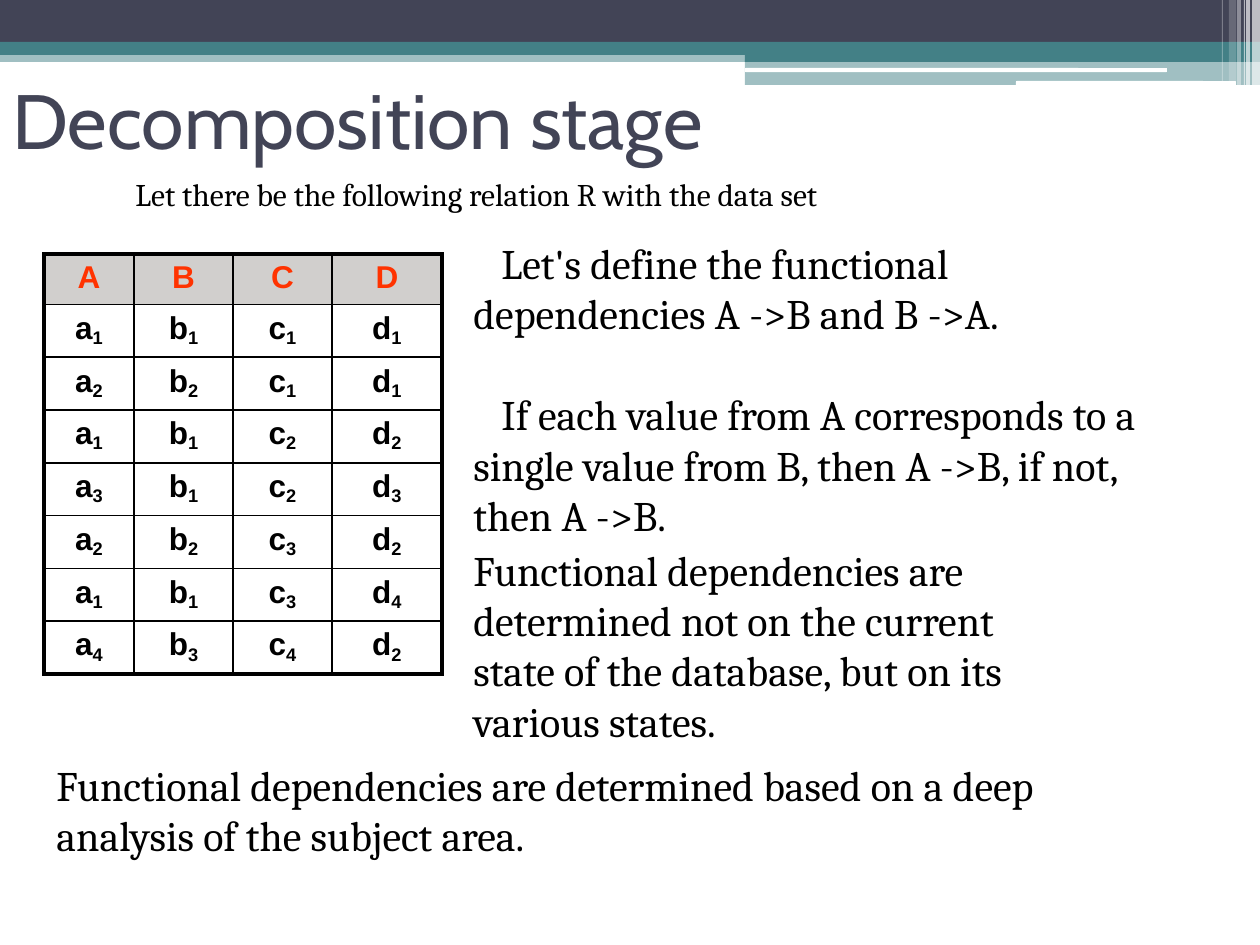
import lxml.etree
import pptx
import pptx.dml.color
import pptx.enum.shapes
import pptx.enum.text
import pptx.oxml.ns
import pptx.util

SCALE = 914400 / 126
COLORS = {
    "navy": "424456",
    "teal": "438086",
    "white": "FFFFFF",
    "black": "000000",
    "red": "FF3300",
    "gray": "D1CFCD",
}
qn = pptx.oxml.ns.qn


def px(length):
    return round(length * SCALE)


def write_text(frame, text, subscript="", size=24, font="Cambria", color="black",
               bold=False, align=pptx.enum.text.PP_ALIGN.LEFT,
               anchor=pptx.enum.text.MSO_ANCHOR.TOP, indent=0, gap=0):
    frame.word_wrap = True
    frame.vertical_anchor = anchor
    for number, line in enumerate(text.split("\n")):
        paragraph = frame.add_paragraph() if number else frame.paragraphs[0]
        paragraph.alignment = align
        if number:
            paragraph.space_before = pptx.util.Pt(gap)
        if indent:
            properties = paragraph._p.get_or_add_pPr()
            properties.set("marL", "0")
            properties.set("indent", str(px(indent)))
        for part in filter(None, (line, subscript)):
            run = paragraph.add_run()
            run.text = part
            run.font.size = pptx.util.Pt(size)
            run.font.name = font
            run.font.bold = bold
            run.font.color.rgb = pptx.dml.color.RGBColor.from_string(COLORS[color])
            if part is subscript:
                run._r.get_or_add_rPr().set("baseline", "-16000")


presentation = pptx.Presentation()
presentation.slide_width = px(1260)
presentation.slide_height = px(945)
slide = presentation.slides.add_slide(presentation.slide_layouts[6])

rectangle = pptx.enum.shapes.MSO_SHAPE.RECTANGLE
rounded = pptx.enum.shapes.MSO_SHAPE.ROUNDED_RECTANGLE
bars = [
    (rectangle, 0, 50, 1260, 12, "teal", 50),
    (rectangle, 0, 0, 1260, 42, "navy", 100),
    (rectangle, 0, 42, 1260, 13, "teal", 100),
    (rectangle, 745, 49, 515, 13, "teal", 100),
    (rectangle, 745, 60, 515, 25, "teal", 50),
    (rounded, 745, 68, 422, 4, "white", 100),
    (rounded, 1016, 81, 220, 5, "white", 100),
    (rectangle, 1252, 0, 8, 85, "white", 65),
    (rectangle, 1246, 0, 4, 85, "white", 65),
    (rectangle, 1244, 0, 1, 85, "white", 60),
    (rectangle, 1237, 0, 4, 85, "white", 40),
    (rectangle, 1229, 0, 7, 81, "white", 20),
    (rectangle, 1222, 0, 1, 81, "white", 30),
]
for kind, left, top, width, height, color, opacity in bars:
    shape = slide.shapes.add_shape(kind, px(left), px(top), px(width), px(height))
    shape.shadow.inherit = False
    shape.line.fill.background()
    shape.fill.solid()
    shape.fill.fore_color.rgb = pptx.dml.color.RGBColor.from_string(COLORS[color])
    if opacity < 100:
        fill_color = shape._element.spPr.find(qn("a:solidFill"))[0]
        lxml.etree.SubElement(fill_color, qn("a:alpha"), val=str(opacity * 1000))

text_boxes = [
    (0, 45, 1134, 147, "Decomposition stage",
     dict(size=44, font="Cabin", color="navy", anchor=pptx.enum.text.MSO_ANCHOR.MIDDLE)),
    (123, 169, 814, 50, "Let there be the following relation R with the data set", dict(size=18)),
    (461, 231, 725, 318,
     "Let's define the functional dependencies A ->B and B ->A.\n"
     "If each value from A corresponds to a single value from B, then A ->B, if not, then A ->B.",
     dict(indent=28, gap=29)),
    (461, 538, 630, 217,
     "Functional dependencies are determined not on the current state of the database, "
     "but on its various states.", {}),
    (44, 753, 1121, 115,
     "Functional dependencies are determined based on a deep analysis of the subject area.", {}),
]
for left, top, width, height, text, style in text_boxes:
    box = slide.shapes.add_textbox(px(left), px(top), px(width), px(height))
    write_text(box.text_frame, text, **style)

column_widths = [90, 99, 99, 110]
subscript_rows = ["", "1111", "2211", "1122", "3123", "2232", "1134", "4342"]
row_count, column_count = len(subscript_rows), len(column_widths)
table = slide.shapes.add_table(row_count, column_count, px(44), px(254),
                               px(sum(column_widths)), px(403)).table
table.first_row = False
table.horz_banding = False
for column, width in zip(table.columns, column_widths):
    column.width = px(width)

for row_index, subscripts in enumerate(subscript_rows):
    table.rows[row_index].height = px(403) // row_count
    for column_index, letter in enumerate("ABCD"):
        cell = table.cell(row_index, column_index)
        outer_edges = {
            "a:lnL": column_index == 0,
            "a:lnR": column_index == column_count - 1,
            "a:lnT": row_index == 0,
            "a:lnB": row_index == row_count - 1,
        }
        for tag, is_outer in outer_edges.items():
            border = lxml.etree.SubElement(cell._tc.get_or_add_tcPr(), qn(tag),
                                           w=str(pptx.util.Pt(2.25 if is_outer else 1)))
            border_fill = lxml.etree.SubElement(border, qn("a:solidFill"))
            lxml.etree.SubElement(border_fill, qn("a:srgbClr"), val=COLORS["black"])
        style = dict(size=18, font="Arial", bold=True, align=pptx.enum.text.PP_ALIGN.CENTER)
        if subscripts:
            cell.fill.background()
            write_text(cell.text_frame, letter.lower(), subscripts[column_index], **style)
        else:
            cell.fill.solid()
            cell.fill.fore_color.rgb = pptx.dml.color.RGBColor.from_string(COLORS["gray"])
            write_text(cell.text_frame, letter, color="red", **style)

presentation.save("out.pptx")
